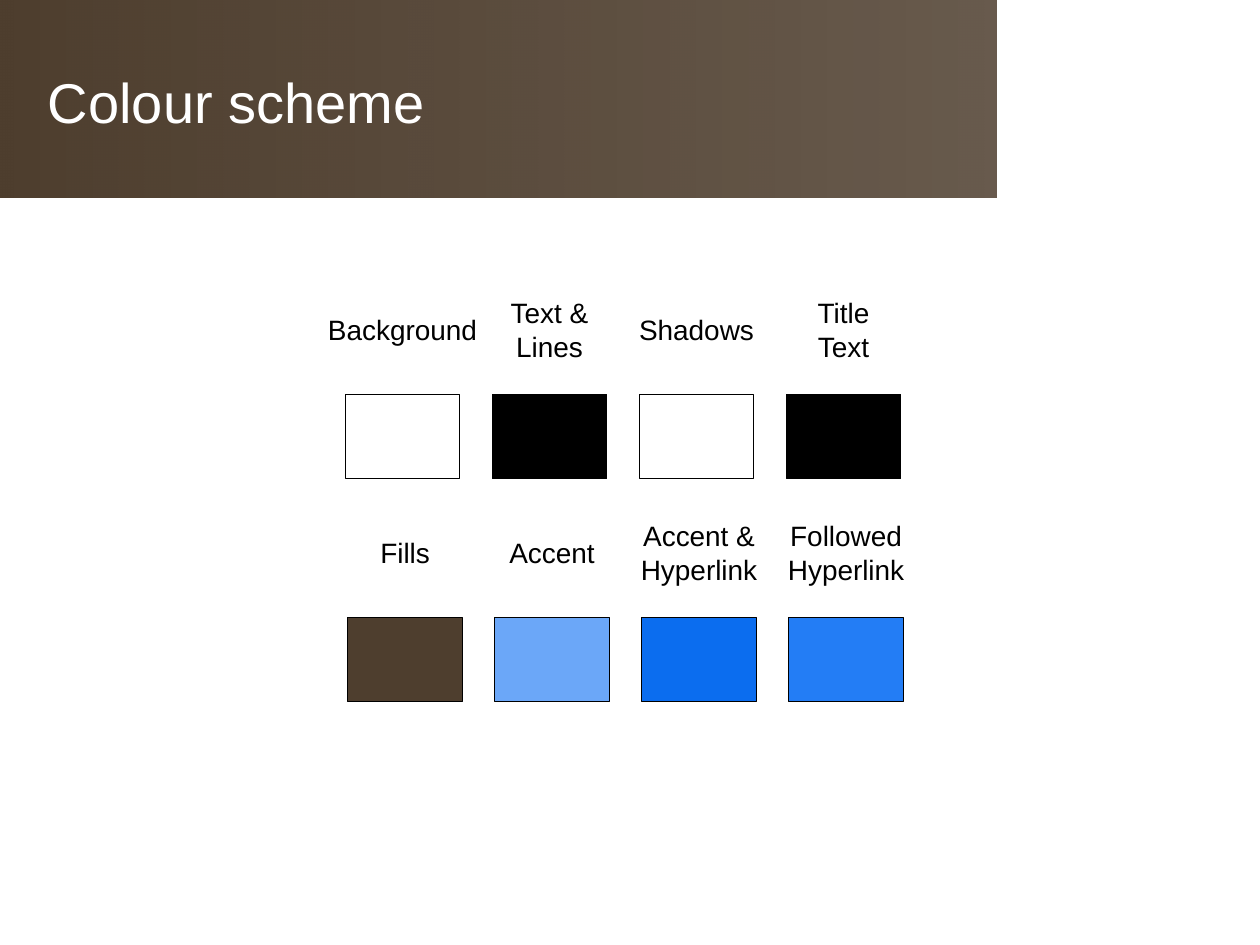
"""Build the colour scheme slide: a banner title over a grid of labelled swatches."""
from typing import NamedTuple

from lxml.etree import SubElement
from pptx import Presentation
from pptx.dml.color import RGBColor
from pptx.enum.shapes import MSO_SHAPE as Shp
from pptx.enum.text import MSO_ANCHOR as Anchor, MSO_AUTO_SIZE as Auto, PP_ALIGN as Align
from pptx.oxml.ns import qn
from pptx.util import Inches, Pt

BLACK = RGBColor(0x00, 0x00, 0x00)
WHITE = RGBColor(0xFF, 0xFF, 0xFF)
BROWN = RGBColor(0x4E, 0x3E, 0x2E)
PALE_BLUE = RGBColor(0x6B, 0xA7, 0xF8)
BLUE = RGBColor(0x0B, 0x6D, 0xEF)
MID_BLUE = RGBColor(0x23, 0x7D, 0xF5)

COL_PITCH = 3.5 / 3
SWATCH_W, SWATCH_H = 0.91, 0.67
LABEL_RISE = 0.51
LINE_H, LABEL_PAD = 0.27, 0.1


class Swatch(NamedTuple):
    label: str
    label_w: float
    color: RGBColor


class Row(NamedTuple):
    left: float
    top: float
    swatches: list[Swatch]


ROWS = [
    Row(2.74, 3.13, [
        Swatch("Background", 1.4, WHITE),
        Swatch("Text &\nLines", 0.85, BLACK),
        Swatch("Shadows", 1.13, WHITE),
        Swatch("Title\vText", 0.65, BLACK),
    ]),
    Row(2.76, 4.9, [
        Swatch("Fills", 0.62, BROWN),
        Swatch("Accent", 0.9, PALE_BLUE),
        Swatch("Accent &\nHyperlink", 1.15, BLUE),
        Swatch("Followed\nHyperlink", 1.15, MID_BLUE),
    ]),
]


def write(tf, text: str, *, size: float, color: RGBColor, align=Align.CENTER,
          anchor=Anchor.TOP, wrap: bool = False, auto=Auto.SHAPE_TO_FIT_TEXT) -> None:
    tf.text = text
    tf.word_wrap, tf.auto_size, tf.vertical_anchor = wrap, auto, anchor
    for p in tf.paragraphs:
        p.alignment = align
        p.font.name, p.font.size, p.font.color.rgb = "Arial", Pt(size), color


def add_rect(s, x: float, y: float, w: float, h: float):
    sp = s.shapes.add_shape(Shp.RECTANGLE, *map(Inches, (x, y, w, h)))
    sp.shadow.inherit = False
    return sp


def add_banner(s) -> None:
    sp = add_rect(s, 0, 0, 7.91, 1.57)
    sp.line.fill.background()
    sp.fill.gradient()
    sp.fill.gradient_angle = 0
    for stop in sp.fill.gradient_stops:
        stop.color.rgb = BROWN
    *_, last = sp._element.spPr.iter(qn("a:srgbClr"))
    SubElement(last, qn("a:alpha"), val="85000")
    s.shapes._spTree.insert(2, sp._element)


def add_title(s, text: str) -> None:
    title = s.shapes.title
    title.left, title.top, title.width, title.height = map(Inches, (0.28, 0.3, 7.48, 1.01))
    write(title.text_frame, text, size=32, color=WHITE, align=Align.LEFT,
          anchor=Anchor.MIDDLE, wrap=True, auto=Auto.NONE)


def add_swatch(s, swatch: Swatch, x: float, y: float) -> None:
    sp = add_rect(s, x, y, SWATCH_W, SWATCH_H)
    sp.fill.solid()
    sp.fill.fore_color.rgb = swatch.color
    sp.line.color.rgb, sp.line.width = BLACK, Pt(0.75)

    w = swatch.label_w
    h = LABEL_PAD + LINE_H * len(swatch.label.splitlines())
    box = s.shapes.add_textbox(*map(Inches, (
        x + (SWATCH_W - w) / 2, y - LABEL_RISE - h / 2, w, h)))
    write(box.text_frame, swatch.label, size=16, color=BLACK)


def main() -> None:
    prs = Presentation()
    prs.slide_width, prs.slide_height = Inches(10), Inches(7.5)
    s = prs.slides.add_slide(prs.slide_layouts[5])
    add_banner(s)
    add_title(s, "Colour scheme")
    for row in ROWS:
        for col, swatch in enumerate(row.swatches):
            add_swatch(s, swatch, row.left + col * COL_PITCH, row.top)
    prs.save("out.pptx")


if __name__ == "__main__":
    main()
